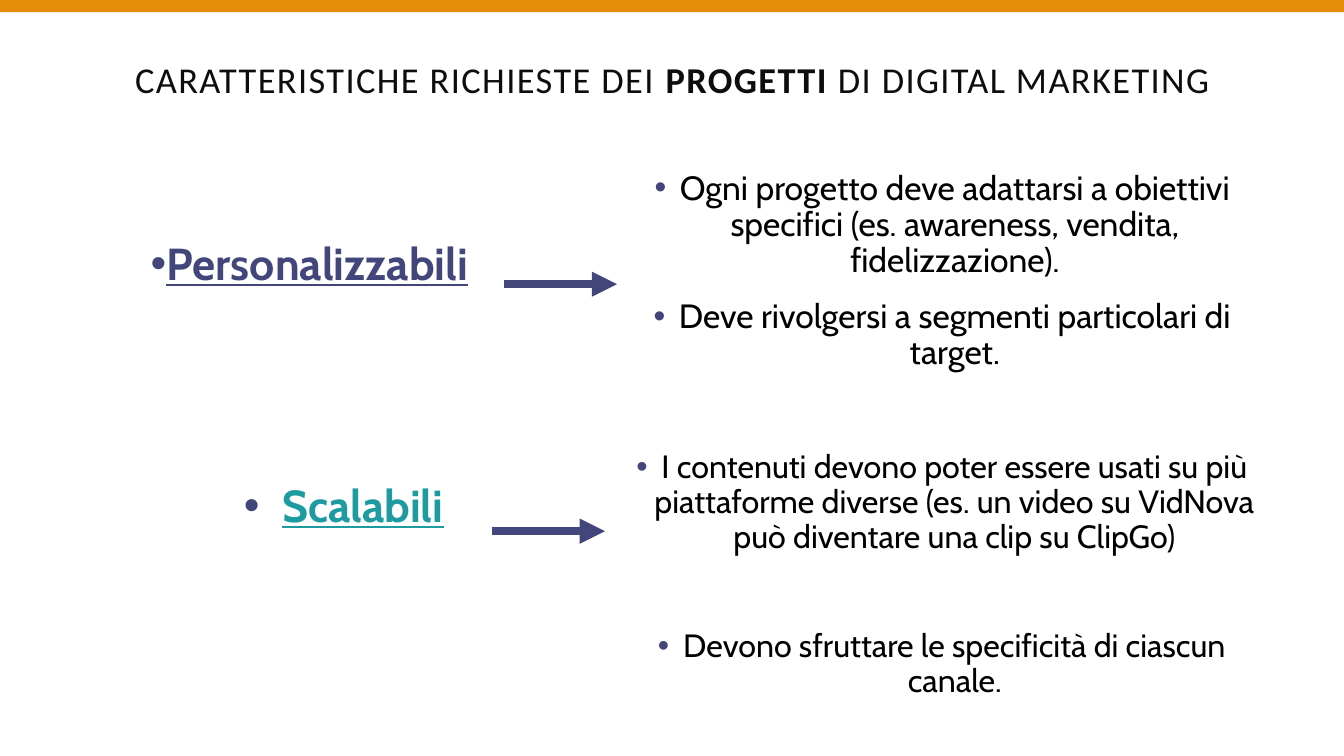
from dataclasses import dataclass

from lxml.etree import SubElement
from pptx import Presentation
from pptx.dml.color import RGBColor as Rgb
from pptx.enum.shapes import MSO_CONNECTOR as Link, MSO_SHAPE as Shape
from pptx.enum.text import MSO_ANCHOR as Anchor, MSO_AUTO_SIZE as Fit, PP_ALIGN as Align
from pptx.oxml.ns import qn
from pptx.util import Inches, Pt


@dataclass(frozen=True)
class Theme:
    bar: Rgb = Rgb.from_string("E58C09")
    head: Rgb = Rgb.from_string("0D0D0D")
    text: Rgb = Rgb.from_string("000000")
    navy: Rgb = Rgb.from_string("43467B")
    teal: Rgb = Rgb.from_string("1D9BA1")
    title_font: str = "Calibri"
    body_font: str = "Cabin"
    title_size: int = 26
    key_size: int = 32
    large: int = 24
    small: int = 23


class Deck:
    def __init__(self, theme):
        self.theme = theme
        self.prs = Presentation()
        self.prs.slide_width = Inches(13.33)
        self.prs.slide_height = Inches(7.5)
        self.slide = self.prs.slides.add_slide(self.prs.slide_layouts[5])

    def style(self, font, name, size, color):
        font.name, font.size, font.color.rgb = name, Pt(size), color

    def bar(self, height):
        bar = self.slide.shapes.add_shape(
            Shape.RECTANGLE, 0, 0, self.prs.slide_width, Inches(height))
        bar.shadow.inherit = False
        bar.fill.solid()
        bar.fill.fore_color.rgb = self.theme.bar
        bar.line.fill.background()

    def title(self, box, parts):
        """Fill the title from (text, bold) parts."""
        title = self.slide.shapes.title
        title.left, title.top, title.width, title.height = map(Inches, box)
        frame = title.text_frame
        frame.auto_size, frame.vertical_anchor = Fit.NONE, Anchor.TOP
        para = frame.paragraphs[0]
        para.alignment = Align.CENTER
        self.style(para.font, self.theme.title_font,
                   self.theme.title_size, self.theme.head)
        for text, bold in parts:
            run = para.add_run()
            run.text = text
            run.font.bold = bold
            run.font._element.set("spc", "100")

    def bullet(self, para, indent):
        props = para._p.get_or_add_pPr()
        props.set("marL", str(Inches(indent)))
        props.set("indent", str(Inches(-indent)))
        color = SubElement(props, qn("a:buClr"))
        SubElement(color, qn("a:srgbClr"), val=str(self.theme.navy))
        SubElement(props, qn("a:buFont"), typeface="Arial")
        SubElement(props, qn("a:buChar"), char="•")

    def items(self, box, texts, size, color, indent=0.25, gap=12,
              align=Align.CENTER, anchor=Anchor.MIDDLE, key=False):
        """Add bulleted paragraphs; key makes them bold and underlined."""
        frame = self.slide.shapes.add_textbox(*map(Inches, box)).text_frame
        frame.word_wrap, frame.vertical_anchor = True, anchor
        for i, text in enumerate(texts):
            para = frame.add_paragraph() if i else frame.paragraphs[0]
            self.bullet(para, indent)
            para.text, para.alignment = text, align
            para.line_spacing = 0.9
            para.space_before, para.space_after = Pt(gap if i else 0), Pt(2)
            self.style(para.font, self.theme.body_font, size, color)
            if key:
                para.font.bold = para.font.underline = True

    def key(self, box, text, color, indent, align):
        self.items(box, [text], self.theme.key_size, color, indent,
                   align=align, anchor=Anchor.TOP, key=True)

    def arrow(self, left, top, width=1.12):
        arrow = self.slide.shapes.add_connector(
            Link.STRAIGHT, *map(Inches, (left, top, left + width, top)))
        arrow.line.color.rgb, arrow.line.width = self.theme.navy, Pt(6)
        SubElement(arrow.line._get_or_add_ln(), qn("a:tailEnd"), type="triangle")
        SubElement(arrow._element.spPr, qn("a:effectLst"))


def main():
    theme = Theme()
    deck = Deck(theme)
    deck.bar(0.12)
    deck.title((0.76, 0.52, 11.82, 0.77), [
        ("CARATTERISTICHE RICHIESTE DEI ", False),
        ("PROGETTI", True),
        (" DI DIGITAL MARKETING", False)])

    deck.key((1.17, 2.35, 3.8, 0.46), "Personalizzabili", theme.navy, 0, Align.CENTER)
    deck.arrow(5, 2.82)
    deck.items((6.12, 2.16, 6.45, 1.07), [
        "Ogni progetto deve adattarsi a obiettivi specifici "
        "(es. awareness, vendita, fidelizzazione).",
        "Deve rivolgersi a segmenti particolari di target."],
        theme.large, theme.text)

    deck.key((2.32, 4.75, 3.8, 1.07), "Scalabili", theme.teal, 0.38, Align.LEFT)
    deck.arrow(4.88, 5.27)
    deck.items((6.12, 5.17, 6.45, 1.07), [
        "I contenuti devono poter essere usati su più piattaforme diverse "
        "(es. un video su VidNova può diventare una clip su ClipGo)",
        "Devono sfruttare le specificità di ciascun canale."],
        theme.small, theme.text, gap=51)

    deck.prs.save("out.pptx")


if __name__ == "__main__":
    main()
